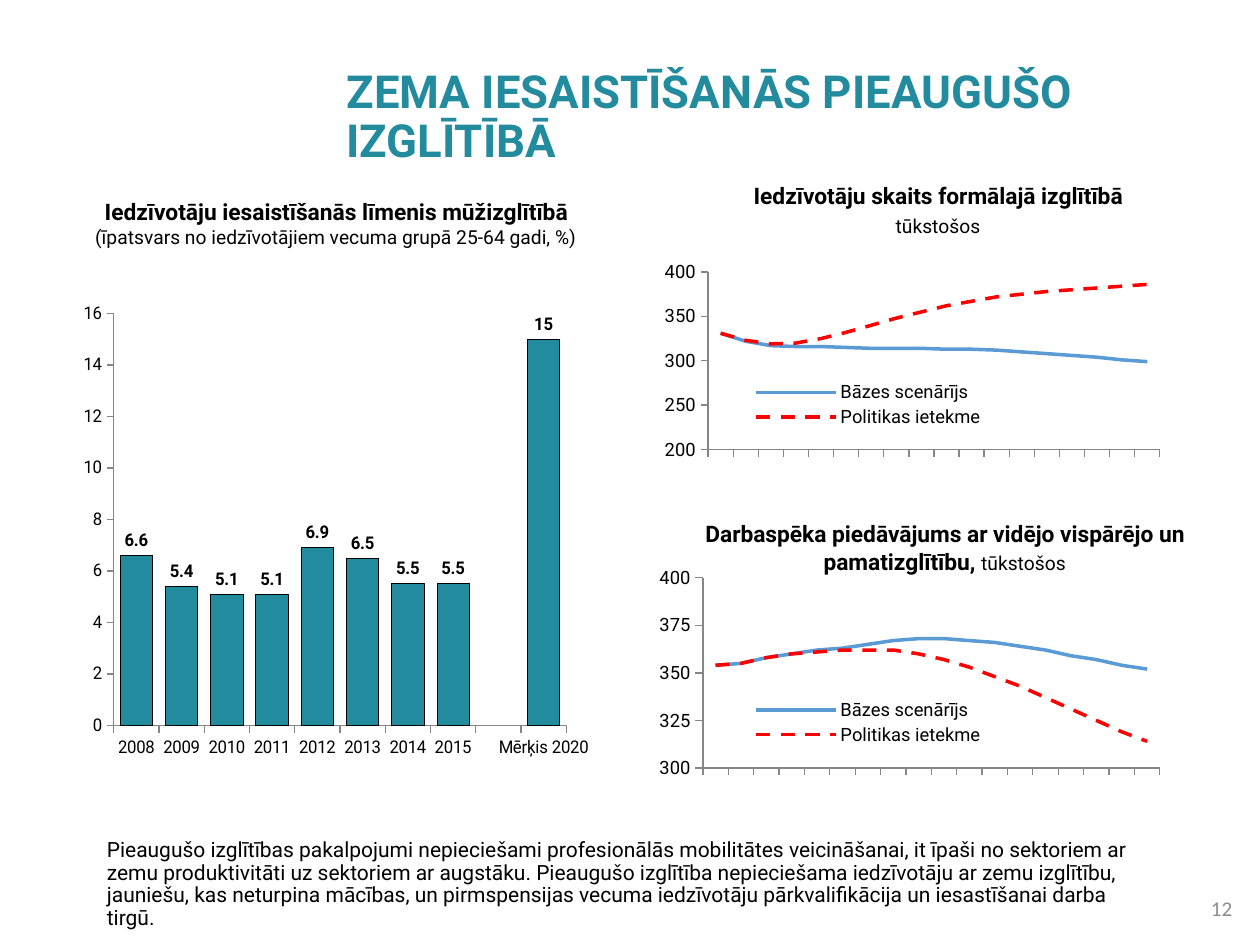
"""Builds the slide on low participation in adult education."""
from pptx import Presentation
from pptx.chart.data import CategoryChartData
from pptx.dml.color import RGBColor
from pptx.enum.chart import XL_CHART_TYPE as ChartType, XL_LABEL_POSITION as LabelPosition
from pptx.enum.chart import XL_LEGEND_POSITION as LegendPosition
from pptx.enum.chart import XL_TICK_LABEL_POSITION as TickLabels, XL_TICK_MARK as TickMark
from pptx.enum.dml import MSO_LINE as Dash
from pptx.enum.text import MSO_ANCHOR as Anchor, MSO_AUTO_SIZE as AutoSize, PP_ALIGN as Align
from pptx.oxml import parse_xml
from pptx.oxml.ns import nsdecls, qn
from pptx.util import Cm, Pt

TEAL = RGBColor(0x22, 0x8B, 0x9D)
BLUE = RGBColor(0x5B, 0x9B, 0xD5)
RED = RGBColor(0xFF, 0x00, 0x00)
BLACK = RGBColor(0x00, 0x00, 0x00)
AXIS_GRAY = RGBColor(0x86, 0x86, 0x86)
NUMBER_GRAY = RGBColor(0x8C, 0x8C, 0x8C)
FONT = "Roboto"

TITLE = "ZEMA IESAISTĪŠANĀS PIEAUGUŠO IZGLĪTĪBĀ"
BODY = (
    "Pieaugušo izglītības pakalpojumi nepieciešami profesionālās mobilitātes veicināšanai, "
    "it īpaši no sektoriem ar zemu produktivitāti uz sektoriem ar augstāku. Pieaugušo izglītība "
    "nepieciešama iedzīvotāju ar zemu izglītību, jauniešu, kas neturpina mācības, un "
    "pirmspensijas vecuma iedzīvotāju pārkvalifikācija un iesastīšanai darba tirgū."
)
HEADINGS = [
    ((13.31, 3.53, 11.2, 1.4), 3,
     [[("Iedzīvotāju skaits formālajā izglītībā", True)], [("tūkstošos", False)]]),
    ((0.64, 3.86, 12.27, 1.27), 0,
     [[("Iedzīvotāju iesaistīšanās līmenis mūžizglītībā", True)],
      [("(īpatsvars no iedzīvotājiem vecuma grupā 25-64 gadi, %)", False)]]),
    ((12.9, 10.36, 12.29, 1.37), 0,
     [[("Darbaspēka piedāvājums ar vidējo vispārējo un pamatizglītību, ", True),
       ("tūkstošos", False)]]),
]
PARTICIPATION = {
    "2008": 6.6, "2009": 5.4, "2010": 5.1, "2011": 5.1, "2012": 6.9,
    "2013": 6.5, "2014": 5.5, "2015": 5.5, "": None, "Mērķis 2020": 15,
}
YEARS = [str(year) for year in range(2013, 2031)]
SCENARIOS = [("Bāzes scenārījs", BLUE, Dash.SOLID), ("Politikas ietekme", RED, Dash.DASH)]
LINE_CHARTS = [
    dict(
        place=(13.11, 5.16, 10.59, 4.65), scale=(200, 400, 50),
        plot=(0.11, 0.07, 0.86, 0.77), legend=(0.19, 0.53, 0.45, 0.23),
        values=[
            [331, 322, 317, 316, 316, 315, 314, 314, 314,
             313, 313, 312, 310, 308, 306, 304, 301, 299],
            [331, 323, 319, 320, 325, 332, 340, 348, 355,
             362, 367, 372, 375, 378, 380, 382, 384, 386],
        ],
    ),
    dict(
        place=(13.11, 11.3, 10.59, 4.98), scale=(300, 400, 25),
        plot=(0.1, 0.07, 0.87, 0.77), legend=(0.19, 0.55, 0.45, 0.21),
        values=[
            [354, 355, 358, 360, 362, 363, 365, 367, 368,
             368, 367, 366, 364, 362, 359, 357, 354, 352],
            [354, 355, 358, 360, 361, 362, 362, 362, 360,
             357, 353, 348, 343, 337, 331, 325, 319, 314],
        ],
    ),
]


def lengths(place):
    return [Cm(value) for value in place]


def move(box, place):
    box.left, box.top, box.width, box.height = lengths(place)


def write(para, text, size, color=BLACK, bold=False, font=FONT, align=Align.LEFT,
          before=0, spacing=None):
    para.alignment = align
    para.space_before = Pt(before)
    para.line_spacing = spacing
    span = para.add_run()
    span.text = text
    span.font.name = font
    span.font.size = Pt(size)
    span.font.bold = bold
    span.font.color.rgb = color


def set_frame(box, anchor=Anchor.TOP):
    frame = box.text_frame
    frame.word_wrap = True
    frame.auto_size = AutoSize.NONE
    frame.vertical_anchor = anchor
    return frame


def add_box(page, place, anchor=Anchor.TOP):
    return set_frame(page.shapes.add_textbox(*lengths(place)), anchor)


def set_layout(parent, position, area, inner=False):
    for old in parent.findall(qn("c:layout")):
        parent.remove(old)
    target = '<c:layoutTarget val="inner"/>' if inner else ""
    modes = '<c:xMode val="edge"/><c:yMode val="edge"/>'
    sizes = "".join(f'<c:{key} val="{value}"/>' for key, value in zip("xywh", area))
    parent.insert(position, parse_xml(
        f'<c:layout {nsdecls("c")}><c:manualLayout>{target}{modes}{sizes}'
        "</c:manualLayout></c:layout>"))


def add_chart(page, kind, place, categories, series, size, scale, plot_area):
    data = CategoryChartData()
    data.categories = categories
    for name, values in series:
        data.add_series(name, values)
    chart = page.shapes.add_chart(kind, *lengths(place), data).chart
    chart.has_title = False
    chart.has_legend = False
    chart.font.name = FONT
    chart.font.size = Pt(size)
    chart.font.color.rgb = BLACK
    chart.plots[0].vary_by_categories = False
    for axis in (chart.category_axis, chart.value_axis):
        axis.has_major_gridlines = False
        axis.major_tick_mark = TickMark.OUTSIDE
        axis.minor_tick_mark = TickMark.NONE
        axis.tick_label_position = TickLabels.LOW
        axis.format.line.color.rgb = AXIS_GRAY
        axis.format.line.width = Pt(0.75)
    values = chart.value_axis
    values.minimum_scale, values.maximum_scale, values.major_unit = scale
    values.tick_labels.number_format = "0"
    values.tick_labels.number_format_is_linked = False
    set_layout(chart.plots[0]._element.getparent(), 0, plot_area, inner=True)
    return chart


def add_scenarios(page, place, scale, plot, legend, values):
    series = [(name, row) for (name, *_), row in zip(SCENARIOS, values)]
    chart = add_chart(page, ChartType.LINE, place, YEARS, series, 10.5, scale, plot)
    chart.category_axis.tick_label_position = TickLabels.NONE
    for line, (_, color, dash) in zip(chart.series, SCENARIOS):
        line.smooth = False
        line.format.line.color.rgb = color
        line.format.line.width = Pt(2)
        line.format.line.dash_style = dash
    chart.has_legend = True
    chart.legend.position = LegendPosition.RIGHT
    chart.legend.include_in_layout = True
    set_layout(chart.legend._element, 1, legend)


def add_participation(page):
    chart = add_chart(
        page, ChartType.COLUMN_CLUSTERED, (1.5, 5.92, 10.39, 10.01), list(PARTICIPATION),
        [("Series 1", list(PARTICIPATION.values()))], 10, (0, 16, 2), (0.08, 0.04, 0.92, 0.83))
    plot = chart.plots[0]
    plot.gap_width = 40
    bars = plot.series[0]
    bars.format.fill.solid()
    bars.format.fill.fore_color.rgb = TEAL
    bars.format.line.color.rgb = BLACK
    bars.format.line.width = Pt(0.5)
    labels = bars.data_labels
    labels.show_value = True
    labels.position = LabelPosition.OUTSIDE_END
    labels.font.bold = True
    labels.font.size = Pt(10)
    labels.font.name = FONT
    labels.font.color.rgb = BLACK


def main():
    deck = Presentation()
    deck.slide_width, deck.slide_height = Cm(25.4), Cm(19.05)
    page = deck.slides.add_slide(deck.slide_layouts[1])
    title, body = page.placeholders
    move(title, (6.73, 0.63, 16.41, 2.87))
    write(set_frame(title, Anchor.BOTTOM).paragraphs[0], TITLE, 26, TEAL, bold=True, spacing=0.9)
    move(body, (1.9, 16.79, 21.44, 2.13))
    para = set_frame(body).paragraphs[0]
    properties = para._p.get_or_add_pPr()
    properties.set("marL", "0")
    properties.set("indent", "0")
    properties.append(parse_xml(f'<a:buNone {nsdecls("a")}/>'))
    write(para, BODY, 12, spacing=0.9)
    for chart in LINE_CHARTS:
        add_scenarios(page, **chart)
    add_participation(page)
    for place, gap, rows in HEADINGS:
        frame = add_box(page, place)
        for index, row in enumerate(rows):
            para = frame.add_paragraph() if index else frame.paragraphs[0]
            for text, bold in row:
                write(para, text, 13 if bold else 11, bold=bold, align=Align.CENTER,
                      before=gap if index else 0)
    number = add_box(page, (23.34, 17.88, 1.75, 0.84), Anchor.MIDDLE)
    write(number.paragraphs[0], "12", 12, NUMBER_GRAY, font="Calibri", align=Align.RIGHT)
    deck.save("out.pptx")


if __name__ == "__main__":
    main()
